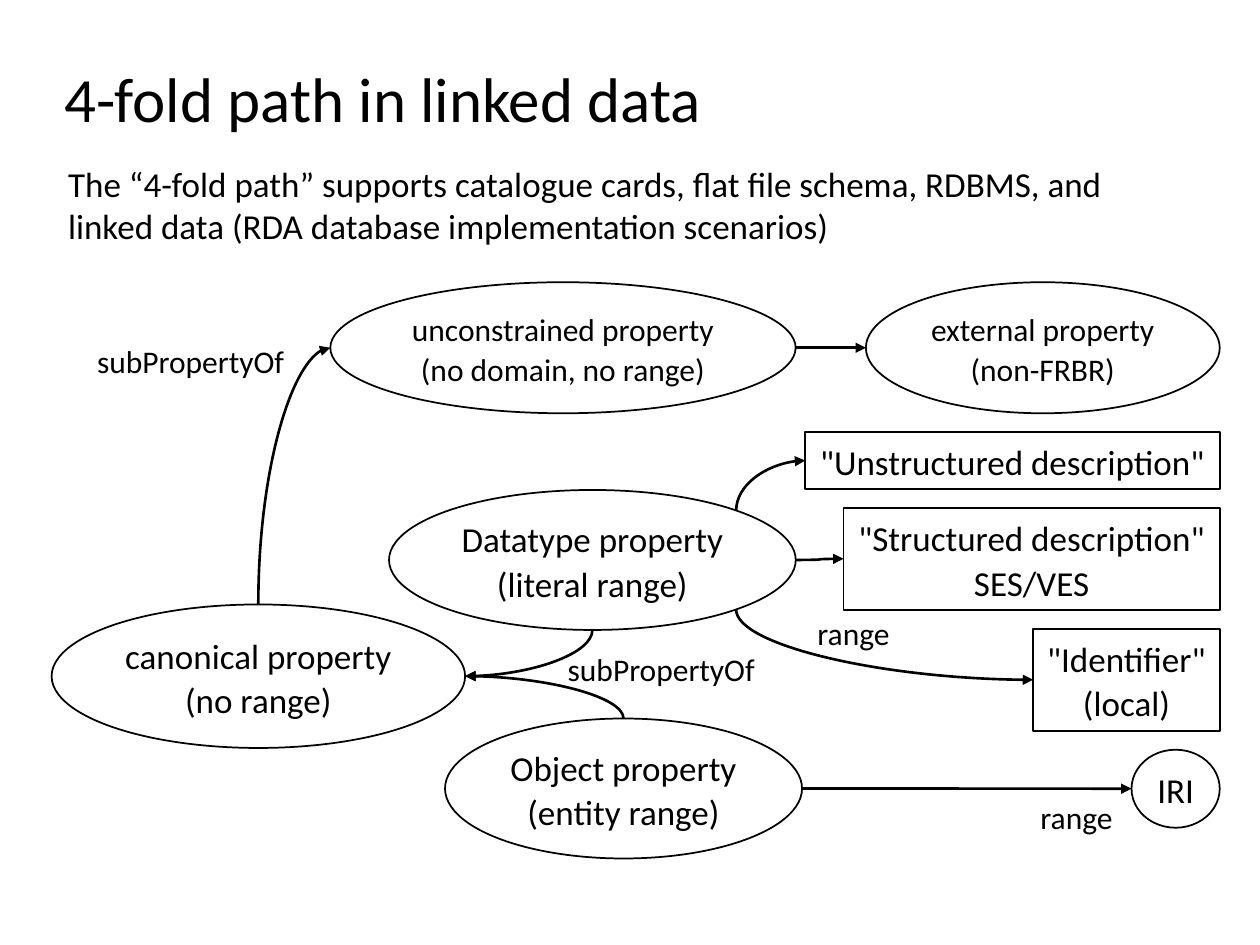
from dataclasses import dataclass
from math import copysign, sqrt
from typing import NamedTuple

import pptx
import pptx.dml.color
import pptx.enum.shapes
import pptx.enum.text
import pptx.oxml
import pptx.oxml.ns
import pptx.util

Pt = pptx.util.Pt
MSO = pptx.enum.shapes.MSO_SHAPE
ALIGN = pptx.enum.text.PP_ALIGN
ANCHOR = pptx.enum.text.MSO_ANCHOR
AUTO = pptx.enum.text.MSO_AUTO_SIZE


@dataclass(frozen=True)
class Theme:
    ink: pptx.dml.color.RGBColor = pptx.dml.color.RGBColor(0, 0, 0)
    paper: pptx.dml.color.RGBColor = pptx.dml.color.RGBColor(255, 255, 255)
    font: str = "Calibri"
    title: int = 36
    text: int = 20
    small: int = 18
    outline: float = 1
    arrow: float = 1.5


class Point(NamedTuple):
    x: float
    y: float


@dataclass(frozen=True)
class Node:
    lines: tuple[str, ...]
    x: float
    y: float
    w: float
    h: float
    size: int
    shape: MSO = MSO.OVAL

    def at(self, side: Point) -> Point:
        """Point on the node, given as a fraction of its width and height."""
        return Point(self.x + side.x * self.w, self.y + side.y * self.h)


class Link(NamedTuple):
    src: Node
    src_side: Point
    dst: Node
    dst_side: Point


class Label(NamedTuple):
    text: str
    x: float
    y: float
    w: float


THEME = Theme()
DIAGONAL = (1 + sqrt(0.5)) / 2
LEFT, RIGHT = Point(0, 0.5), Point(1, 0.5)
TOP, BOTTOM = Point(0.5, 0), Point(0.5, 1)
UPPER_RIGHT, LOWER_RIGHT = Point(DIAGONAL, 1 - DIAGONAL), Point(DIAGONAL, DIAGONAL)
COLUMN_TOP, COLUMN_RIGHT, COLUMN_GAP = 161.3, 697, 10.8


def right_column() -> list[Node]:
    """Right-aligned nodes stacked with equal gaps."""
    rows = [
        (("external property", "(non-FRBR)"), 202.2, 74.9, THEME.small, MSO.OVAL),
        (('"Unstructured description"',), 236.9, 32.4, THEME.text, MSO.RECTANGLE),
        (('"Structured description"', "SES/VES"), 215, 58.3, THEME.text, MSO.RECTANGLE),
        (('"Identifier"', "(local)"), 106.6, 58.3, THEME.text, MSO.RECTANGLE),
        (("IRI",), 50.4, 44.6, THEME.text, MSO.OVAL),
    ]
    nodes, y = [], COLUMN_TOP
    for lines, w, h, size, shape in rows:
        nodes.append(Node(lines, COLUMN_RIGHT - w, y, w, h, size, shape))
        y += h + COLUMN_GAP
    return nodes


def write(tf, lines: tuple[str, ...], size: int, spacing: float = 1,
          align: ALIGN = ALIGN.LEFT, anchor: ANCHOR = ANCHOR.TOP, wrap: bool = False) -> None:
    frame_format = {"auto_size": AUTO.NONE, "word_wrap": wrap, "vertical_anchor": anchor}
    for name, value in frame_format.items():
        setattr(tf, name, value)
    for i, line in enumerate(lines):
        p = tf.add_paragraph() if i else tf.paragraphs[0]
        for name, value in {"alignment": align, "line_spacing": spacing,
                            "space_before": Pt(0)}.items():
            setattr(p, name, value)
        r = p.add_run()
        r.text = line
        for name, value in {"name": THEME.font, "size": Pt(size)}.items():
            setattr(r.font, name, value)
        r.font.color.rgb = THEME.ink


def place(sp, x: float, y: float, w: float, h: float) -> None:
    for name, value in {"left": x, "top": y, "width": w, "height": h}.items():
        setattr(sp, name, Pt(value))


def draw_node(s, node: Node) -> None:
    sp = s.shapes.add_shape(node.shape, Pt(node.x), Pt(node.y), Pt(node.w), Pt(node.h))
    sp.shadow.inherit = False
    sp.fill.solid()
    sp.fill.fore_color.rgb = THEME.paper
    sp.line.color.rgb = THEME.ink
    sp.line.width = Pt(THEME.outline)
    write(sp.text_frame, node.lines, node.size, 1.05, ALIGN.CENTER, ANCHOR.MIDDLE)


def draw_link(s, link: Link) -> None:
    """Curved arrow; it makes a quarter turn unless it leaves from the right side."""
    a, b = link.src.at(link.src_side), link.dst.at(link.dst_side)
    turns = link.src_side != RIGHT
    dx, dy = b.x - a.x, b.y - a.y
    if turns:  # unrotated frame: width and height change places about the centre
        mid = Point((a.x + b.x) / 2, (a.y + b.y) / 2)
        half = Point(copysign(dy / 2, dx), copysign(dx / 2, dy))
        a = Point(mid.x + half.x, mid.y - half.y)
        b = Point(mid.x - half.x, mid.y + half.y)
    cxn = s.shapes.add_connector(pptx.enum.shapes.MSO_CONNECTOR.CURVE,
                                 Pt(a.x), Pt(a.y), Pt(b.x), Pt(b.y))
    cxn.line.color.rgb = THEME.ink
    cxn.line.width = Pt(THEME.arrow)
    spPr = cxn._element.spPr
    if turns:
        spPr.find(pptx.oxml.ns.qn("a:prstGeom")).set("prst", "curvedConnector2")
        degrees = 270 if dx * dy > 0 else 90
        spPr.find(pptx.oxml.ns.qn("a:xfrm")).set("rot", str(degrees * 60000))
    ns = pptx.oxml.ns.nsdecls("a")
    spPr.find(pptx.oxml.ns.qn("a:ln")).append(
        pptx.oxml.parse_xml(f'<a:tailEnd {ns} type="triangle"/>'))
    spPr.append(pptx.oxml.parse_xml(f"<a:effectLst {ns}/>"))


def draw_label(s, label: Label) -> None:
    sp = s.shapes.add_textbox(Pt(label.x), Pt(label.y), Pt(label.w), Pt(30))
    write(sp.text_frame, (label.text,), THEME.small, 1.06)


def draw_headings(s) -> None:
    title, body = s.shapes.title, s.placeholders[1]
    place(title, 29.5, 30.2, 381.6, 51)
    write(title.text_frame, ("4-fold path in linked data",), THEME.title)
    place(body, 31.7, 89.3, 648.7, 55.4)
    write(body.text_frame, ("The “4-fold path” supports catalogue cards, flat file schema, RDBMS, "
                            "and linked data (RDA database implementation scenarios)",),
          THEME.text, wrap=True)
    pPr = body.text_frame.paragraphs[0]._p.get_or_add_pPr()
    for name in ("marL", "indent"):
        pPr.set(name, "0")
    pPr.append(pptx.oxml.parse_xml(f'<a:buNone {pptx.oxml.ns.nsdecls("a")}/>'))


def main() -> None:
    prs = pptx.Presentation()
    prs.slide_width, prs.slide_height = Pt(720), Pt(540)
    s = prs.slides.add_slide(prs.slide_layouts[1])
    draw_headings(s)

    external, unstructured, structured, identifier, iri = column = right_column()
    unconstrained = Node(("unconstrained property", "(no domain, no range)"),
                         188.8, COLUMN_TOP, 265.9, 74.9, THEME.small)
    datatype = Node(("Datatype property", "(literal range)"), 222.3, 280, 232.4, 80, THEME.text)
    canonical = Node(("canonical property", "(no range)"), 29.5, 345.4, 236.3, 82, THEME.text)
    entity = Node(("Object property", "(entity range)"), 254.3, 410.6, 204, 80, THEME.text)
    for node in [unconstrained, datatype, canonical, entity, *column]:
        draw_node(s, node)

    for link in [
        Link(canonical, TOP, unconstrained, LEFT),
        Link(unconstrained, RIGHT, external, LEFT),
        Link(datatype, UPPER_RIGHT, unstructured, LEFT),
        Link(datatype, RIGHT, structured, LEFT),
        Link(datatype, LOWER_RIGHT, identifier, LEFT),
        Link(datatype, BOTTOM, canonical, RIGHT),
        Link(entity, TOP, canonical, RIGHT),
        Link(entity, RIGHT, iri, LEFT),
    ]:
        draw_link(s, link)

    for label in [
        Label("subPropertyOf", 48.4, 190.8, 122.4),
        Label("subPropertyOf", 317.3, 366.5, 122.4),
        Label("range", 460, 346.3, 56.2),
        Label("range", 587.4, 451.4, 56.2),
    ]:
        draw_label(s, label)
    prs.save("out.pptx")


if __name__ == "__main__":
    main()
